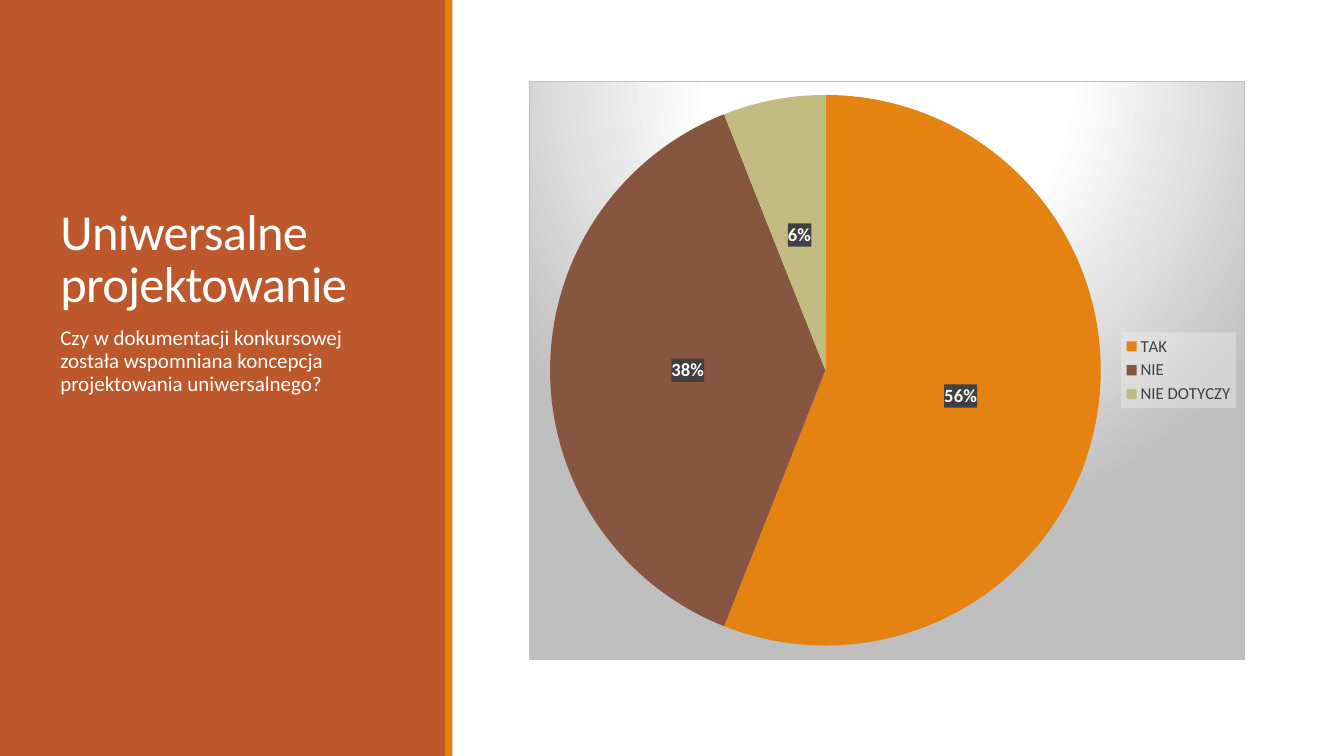
import pptx
import pptx.chart.data
import pptx.dml.color
import pptx.enum.chart
import pptx.enum.shapes
import pptx.enum.text
import pptx.oxml
import pptx.util

Cm = pptx.util.Cm
Pt = pptx.util.Pt
RGBColor = pptx.dml.color.RGBColor

RUST = RGBColor(0xBD, 0x58, 0x2C)
ORANGE = RGBColor(0xE4, 0x83, 0x12)
BROWN = RGBColor(0x86, 0x56, 0x40)
OLIVE = RGBColor(0xC2, 0xBC, 0x80)
WHITE = RGBColor(0xFF, 0xFF, 0xFF)
PALE = RGBColor(0xF2, 0xF2, 0xF2)
SILVER = RGBColor(0xBF, 0xBF, 0xBF)
DARK = RGBColor(0x40, 0x40, 0x40)

NS = ('xmlns:c="http://schemas.openxmlformats.org/drawingml/2006/chart" '
      'xmlns:a="http://schemas.openxmlformats.org/drawingml/2006/main"')


def set_all(obj, **values):
    for name, value in values.items():
        setattr(obj, name, value)


def set_font(font, size, color, bold=False):
    set_all(font, name="Calibri", size=Pt(size), bold=bold)
    font.color.rgb = color


def place(sp, left, top, width, height):
    set_all(sp, left=Cm(left), top=Cm(top), width=Cm(width), height=Cm(height))


def color_xml(color, alpha=100):
    return f'<a:srgbClr val="{color}"><a:alpha val="{alpha * 1000}"/></a:srgbClr>'


def solid_xml(color, alpha):
    return f"<a:solidFill>{color_xml(color, alpha)}</a:solidFill>"


def backdrop_xml():
    stops = "".join(
        f'<a:gs pos="{pos * 1000}">{color_xml(color)}</a:gs>'
        for pos, color in ((0, WHITE), (39, WHITE), (100, SILVER)))
    return (f'<a:gradFill><a:gsLst>{stops}</a:gsLst><a:path path="circle">'
            '<a:fillToRect l="50000" t="-80000" r="50000" b="180000"/>'
            f'</a:path></a:gradFill><a:ln w="9525">{solid_xml(SILVER, 100)}</a:ln>')


def format_part(chart, query, xml):
    sp_pr = pptx.oxml.parse_xml(f"<c:spPr {NS}>{xml}</c:spPr>")
    chart.element.xpath(query)[0].addprevious(sp_pr)


def add_bar(s, left, top, width, height, color):
    sp = s.shapes.add_shape(pptx.enum.shapes.MSO_SHAPE.RECTANGLE,
                            Cm(left), Cm(top), Cm(width), Cm(height))
    sp.shadow.inherit = False
    sp.fill.solid()
    sp.fill.fore_color.rgb = color
    sp.line.fill.background()


def write(sp, text, size, anchor, **spacing):
    tf = sp.text_frame
    set_all(tf, word_wrap=True, vertical_anchor=anchor,
            auto_size=pptx.enum.text.MSO_AUTO_SIZE.NONE)
    p = tf.paragraphs[0]
    set_all(p, alignment=pptx.enum.text.PP_ALIGN.LEFT, **spacing)
    r = p.add_run()
    r.text = text
    set_font(r.font, size, WHITE)
    return r


def add_side_panel(s, left, top, width, height):
    add_bar(s, left, top, width, height, RUST)
    add_bar(s, left + width - 0.03, top, 0.18, height, ORANGE)
    text_left, text_width = left + 1.27, width - 2.36
    title = s.shapes.title
    place(title, text_left, top + 1.65, text_width, 6.35)
    r = write(title, "Uniwersalne projektowanie", 36,
              pptx.enum.text.MSO_ANCHOR.BOTTOM, line_spacing=0.85)
    r._r.get_or_add_rPr().set("spc", "-50")
    question = s.shapes.add_textbox(Cm(text_left), Cm(top + 8.13),
                                    Cm(text_width), Cm(9.4))
    write(question,
          "Czy w dokumentacji konkursowej została wspomniana koncepcja "
          "projektowania uniwersalnego?", 15, pptx.enum.text.MSO_ANCHOR.TOP,
          line_spacing=0.9, space_before=Pt(12), space_after=Pt(2))


def add_answer_chart(s, left, top, width, height):
    data = pptx.chart.data.CategoryChartData()
    data.categories = ["TAK", "NIE", "NIE DOTYCZY"]
    data.add_series("Odpowiedzi", (56, 38, 6))
    chart = s.shapes.add_chart(pptx.enum.chart.XL_CHART_TYPE.PIE, Cm(left), Cm(top),
                               Cm(width), Cm(height), data).chart
    set_all(chart, has_title=False, has_legend=True)
    set_font(chart.font, 10, DARK)
    set_all(chart.legend, include_in_layout=False,
            position=pptx.enum.chart.XL_LEGEND_POSITION.RIGHT)
    set_font(chart.legend.font, 12, DARK)
    plot = chart.plots[0]
    set_all(plot, vary_by_categories=True, has_data_labels=True)
    set_all(plot.data_labels, show_percentage=True, show_value=False,
            number_format="0%", number_format_is_linked=False,
            position=pptx.enum.chart.XL_LABEL_POSITION.CENTER)
    set_font(plot.data_labels.font, 13.3, WHITE, bold=True)
    for i, color in enumerate((ORANGE, BROWN, OLIVE)):
        fmt = plot.series[0].points[i].format
        fmt.fill.solid()
        fmt.fill.fore_color.rgb = color
        fmt.line.fill.background()
    format_part(chart, "c:txPr", backdrop_xml())
    format_part(chart, ".//c:legend/c:txPr", solid_xml(PALE, 39))
    format_part(chart, ".//c:dLbls/c:txPr", solid_xml(DARK, 90))


def main():
    prs = pptx.Presentation()
    set_all(prs, slide_width=Cm(33.87), slide_height=Cm(19.05))
    s = prs.slides.add_slide(prs.slide_layouts[5])
    add_side_panel(s, 0, 0, 11.25, 19.05)
    add_answer_chart(s, 13.34, 2.03, 18.03, 14.6)
    tree = s.shapes.title._element.getparent()
    tree.append(s.shapes.title._element)
    prs.save("out.pptx")


if __name__ == "__main__":
    main()
